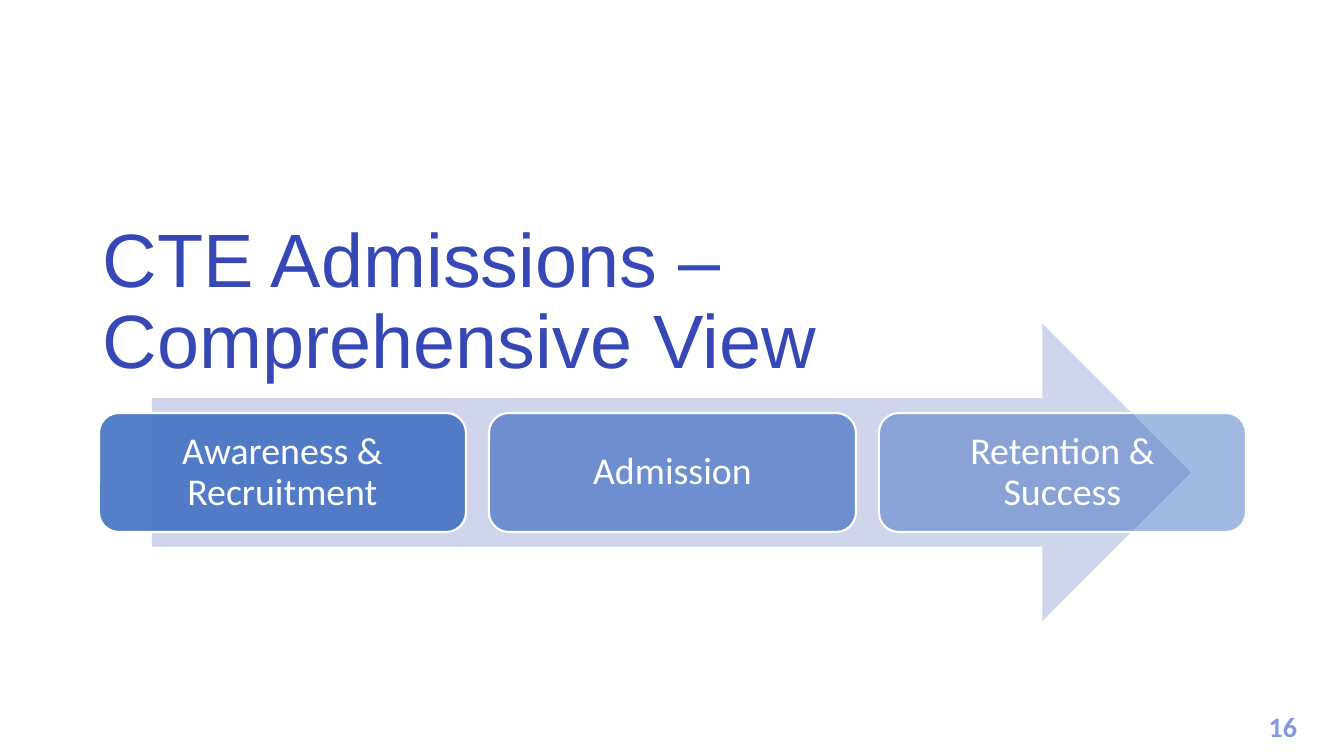
from typing import NamedTuple

from lxml.etree import SubElement
from pptx import Presentation
from pptx.dml.color import RGBColor
from pptx.enum.shapes import MSO_SHAPE
from pptx.enum.text import MSO_ANCHOR, PP_ALIGN
from pptx.oxml.ns import qn
from pptx.util import Emu, Pt

COLORS = {
    "title": "3647B6",
    "number": "8397E7",
    "arrow": "CFD5EA",
    "stage": "4472C4",
    "white": "FFFFFF",
}


class Frame(NamedTuple):
    left: int
    top: int
    width: int
    height: int


class Stage(NamedTuple):
    label: str
    opacity: int  # percent


STAGES = [
    Stage("Awareness & Recruitment", 90),
    Stage("Admission", 70),
    Stage("Retention &\vSuccess", 50),
]
FIRST_STAGE = Frame(99, 413, 367, 119)
STAGE_STEP = 390


def px(length: int) -> Emu:
    return Emu(round(length * 914400 / 100.8))


def place(frame: Frame) -> list[Emu]:
    return [px(length) for length in frame]


def color(name: str) -> RGBColor:
    return RGBColor.from_string(COLORS[name])


def write(box, text: str, *, size: int, ink: str, font: str = "Calibri",
          bold: bool = False, align=PP_ALIGN.CENTER, anchor=MSO_ANCHOR.MIDDLE,
          spacing: float = 0.9, inset: tuple[int, int] = (10, 5)) -> None:
    frame = box.text_frame
    frame.word_wrap = True
    frame.vertical_anchor = anchor
    frame.margin_left = frame.margin_right = px(inset[0])
    frame.margin_top = frame.margin_bottom = px(inset[1])
    para = frame.paragraphs[0]
    para.text = text
    para.alignment = align
    para.line_spacing = spacing
    para.font.name = font
    para.font.size = Pt(size)
    para.font.bold = bold
    para.font.color.rgb = color(ink)


def add_block(page, kind, frame: Frame, fill: str, opacity: int = 100):
    block = page.shapes.add_shape(kind, *place(frame))
    block.shadow.inherit = False
    block.fill.solid()
    block.fill.fore_color.rgb = color(fill)
    block.line.fill.background()
    if opacity < 100:
        tone = block.fill._xPr.find(qn("a:solidFill"))[0]
        SubElement(tone, qn("a:alpha")).set("val", str(opacity * 1000))
    return block


def add_stage(page, stage: Stage, index: int) -> None:
    left = FIRST_STAGE.left + index * STAGE_STEP
    card = add_block(page, MSO_SHAPE.ROUNDED_RECTANGLE,
                     FIRST_STAGE._replace(left=left), "stage", stage.opacity)
    card.line.color.rgb = color("white")
    card.line.width = Pt(1.5)
    write(card, stage.label, size=27, ink="white", inset=(11, 11))


def main() -> None:
    deck = Presentation()
    deck.slide_width, deck.slide_height = px(1344), px(756)
    page = deck.slides.add_slide(deck.slide_layouts[6])

    # Page number
    number = page.shapes.add_textbox(*place(Frame(1252, 704, 62, 44)))
    write(number, "16", size=20, ink="number", bold=True,
          anchor=MSO_ANCHOR.TOP, spacing=1.0)

    # Title
    title = page.shapes.add_textbox(*place(Frame(93, 243, 1159, 121)))
    write(title, "CTE Admissions – Comprehensive View", size=54, ink="title",
          font="Arial", align=PP_ALIGN.LEFT)

    # Process arrow with its stages
    add_block(page, MSO_SHAPE.RIGHT_ARROW, Frame(152, 324, 1039, 297), "arrow")
    for index, stage in enumerate(STAGES):
        add_stage(page, stage, index)

    deck.save("out.pptx")


if __name__ == "__main__":
    main()
